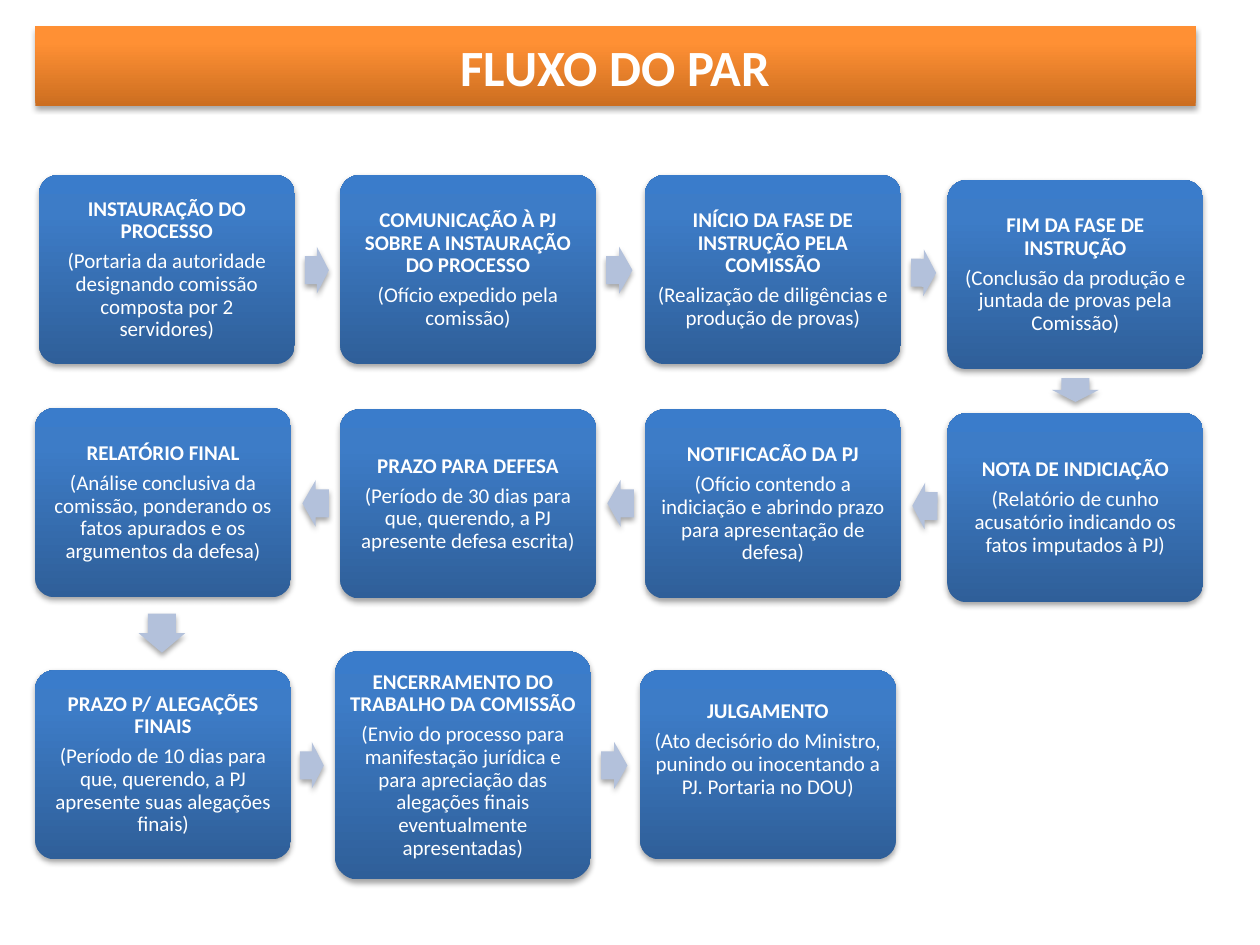
import copy

import pptx
import pptx.dml.color
import pptx.enum.shapes
import pptx.enum.text
import pptx.oxml
import pptx.oxml.ns
import pptx.util
from pptx.util import Inches

BOX_WIDTH, BOX_HEIGHT = 2.03, 1.5
ARROW_BREADTH = 0.37
SHADOW = (
    '<a:outerShdw %s blurRad="40000" dist="23000" dir="5400000" rotWithShape="0">'
    '<a:srgbClr val="000000"><a:alpha val="35000"/></a:srgbClr></a:outerShdw>'
    % pptx.oxml.ns.nsdecls("a")
)


def color(hex_value):
    return pptx.dml.color.RGBColor.from_string(hex_value)


class FlowSlide:
    font = "Calibri"
    text_color = "FFFFFF"
    arrow_color = "B3C1DB"
    # Dark at the bottom, light at the top
    blue = ((0, "2F5F99"), (0.8, "3D7CC7"), (1, "3A7CCB"))
    orange = ((0, "CC6E20"), (0.8, "FF9034"), (1, "FF9136"))

    def __init__(self, slide):
        self.slide = slide

    def shape(self, kind, left, top, width, height):
        shape = self.slide.shapes.add_shape(
            kind, Inches(left), Inches(top), Inches(width), Inches(height))
        shape.line.fill.background()
        shape.shadow.inherit = False
        effects = shape._element.spPr.find(pptx.oxml.ns.qn("a:effectLst"))
        effects.append(pptx.oxml.parse_xml(SHADOW))
        return shape

    def gradient(self, shape, stops):
        shape.fill.gradient()
        shape.fill.gradient_angle = 90
        stop_list = shape._element.spPr.find(".//" + pptx.oxml.ns.qn("a:gsLst"))
        stop_list.insert(1, copy.deepcopy(stop_list[0]))
        for stop, (position, hex_value) in zip(shape.fill.gradient_stops, stops):
            stop.position = position
            stop.color.rgb = color(hex_value)

    def label(self, paragraph, text, size, bold):
        paragraph.text = text
        paragraph.alignment = pptx.enum.text.PP_ALIGN.CENTER
        paragraph.font.name = self.font
        paragraph.font.size = pptx.util.Pt(size)
        paragraph.font.bold = bold
        paragraph.font.color.rgb = color(self.text_color)

    def banner(self, text, left, top, width, height):
        banner = self.shape(pptx.enum.shapes.MSO_SHAPE.RECTANGLE, left, top, width, height)
        self.gradient(banner, self.orange)
        banner.text_frame.vertical_anchor = pptx.enum.text.MSO_ANCHOR.MIDDLE
        self.label(banner.text_frame.paragraphs[0], text, 29, True)

    def step(self, left, top, heading, detail, height=BOX_HEIGHT, bottom_inset=0.05):
        step = self.shape(
            pptx.enum.shapes.MSO_SHAPE.ROUNDED_RECTANGLE, left, top, BOX_WIDTH, height)
        step.adjustments[0] = 0.1
        self.gradient(step, self.blue)
        frame = step.text_frame
        frame.word_wrap = True
        frame.vertical_anchor = pptx.enum.text.MSO_ANCHOR.MIDDLE
        frame.margin_left = frame.margin_right = frame.margin_top = Inches(0.05)
        frame.margin_bottom = Inches(bottom_inset)
        self.label(frame.paragraphs[0], heading, 12, True)
        self.label(frame.add_paragraph(), detail, 12, False)
        for paragraph in frame.paragraphs:
            paragraph.line_spacing = 0.9
            paragraph.space_after = pptx.util.Pt(4.2)

    def arrow(self, left, top, length, rotation=0):
        arrow = self.shape(
            pptx.enum.shapes.MSO_SHAPE.RIGHT_ARROW, left, top, length, ARROW_BREADTH)
        arrow.adjustments[0] = 0.6
        arrow.adjustments[1] = 0.5
        arrow.rotation = rotation
        arrow.fill.solid()
        arrow.fill.fore_color.rgb = color(self.arrow_color)


def main():
    presentation = pptx.Presentation()
    presentation.slide_width = Inches(10)
    presentation.slide_height = Inches(7.5)
    flow = FlowSlide(presentation.slides.add_slide(presentation.slide_layouts[6]))

    # Opening and evidence, left to right
    flow.step(0.31, 1.39, "INSTAURAÇÃO DO PROCESSO",
              "(Portaria da autoridade designando comissão composta por 2 servidores)")
    flow.step(2.7, 1.39, "COMUNICAÇÃO À PJ SOBRE A INSTAURAÇÃO DO PROCESSO",
              "(Ofício expedido pela comissão)")
    flow.step(5.12, 1.39, "INÍCIO DA FASE DE INSTRUÇÃO PELA COMISSÃO",
              "(Realização de diligências e produção de provas)")
    flow.step(7.52, 1.43, "FIM DA FASE DE INSTRUÇÃO",
              "(Conclusão da produção e juntada de provas pela Comissão)")

    # Charges and defence, right to left
    flow.step(7.52, 3.28, "NOTA DE INDICIAÇÃO",
              "(Relatório de cunho acusatório indicando os fatos imputados à PJ)")
    flow.step(5.12, 3.25, "NOTIFICACÃO DA PJ",
              "(Ofício contendo a indiciação e abrindo prazo para apresentação de defesa)")
    flow.step(2.7, 3.25, "PRAZO PARA DEFESA",
              "(Período de 30 dias para que, querendo, a PJ apresente defesa escrita)")
    flow.step(0.28, 3.24, "RELATÓRIO FINAL",
              "(Análise conclusiva da comissão, ponderando os fatos apurados e os "
              "argumentos da defesa)")

    # Closing and judgment, left to right
    flow.step(0.28, 5.32, "PRAZO P/ ALEGAÇÕES FINAIS",
              "(Período de 10 dias para que, querendo, a PJ apresente suas alegações finais)")
    flow.step(2.66, 5.17, "ENCERRAMENTO DO TRABALHO DA COMISSÃO",
              "(Envio do processo para manifestação jurídica e para apreciação das "
              "alegações finais eventualmente apresentadas)", height=1.81)
    flow.step(5.08, 5.32, "JULGAMENTO",
              "(Ato decisório do Ministro, punindo ou inocentando a PJ. Portaria no DOU)",
              bottom_inset=0.29)

    # Arrows in order of the flow: left, top, length, rotation
    for placement in (
        (2.42, 1.96, 0.19), (4.81, 1.96, 0.21), (7.23, 1.98, 0.2, 0.8),
        (8.44, 2.91, 0.19, 90),
        (7.24, 3.83, 0.2, 180.8), (4.82, 3.81, 0.21, 180), (2.4, 3.81, 0.21, 180.2),
        (1.13, 4.84, 0.31, 90),
        (2.38, 5.89, 0.19), (4.77, 5.89, 0.21),
    ):
        flow.arrow(*placement)

    # Title banner
    flow.banner("FLUXO DO PAR", 0.28, 0.21, 9.21, 0.63)

    presentation.save("out.pptx")


if __name__ == "__main__":
    main()
